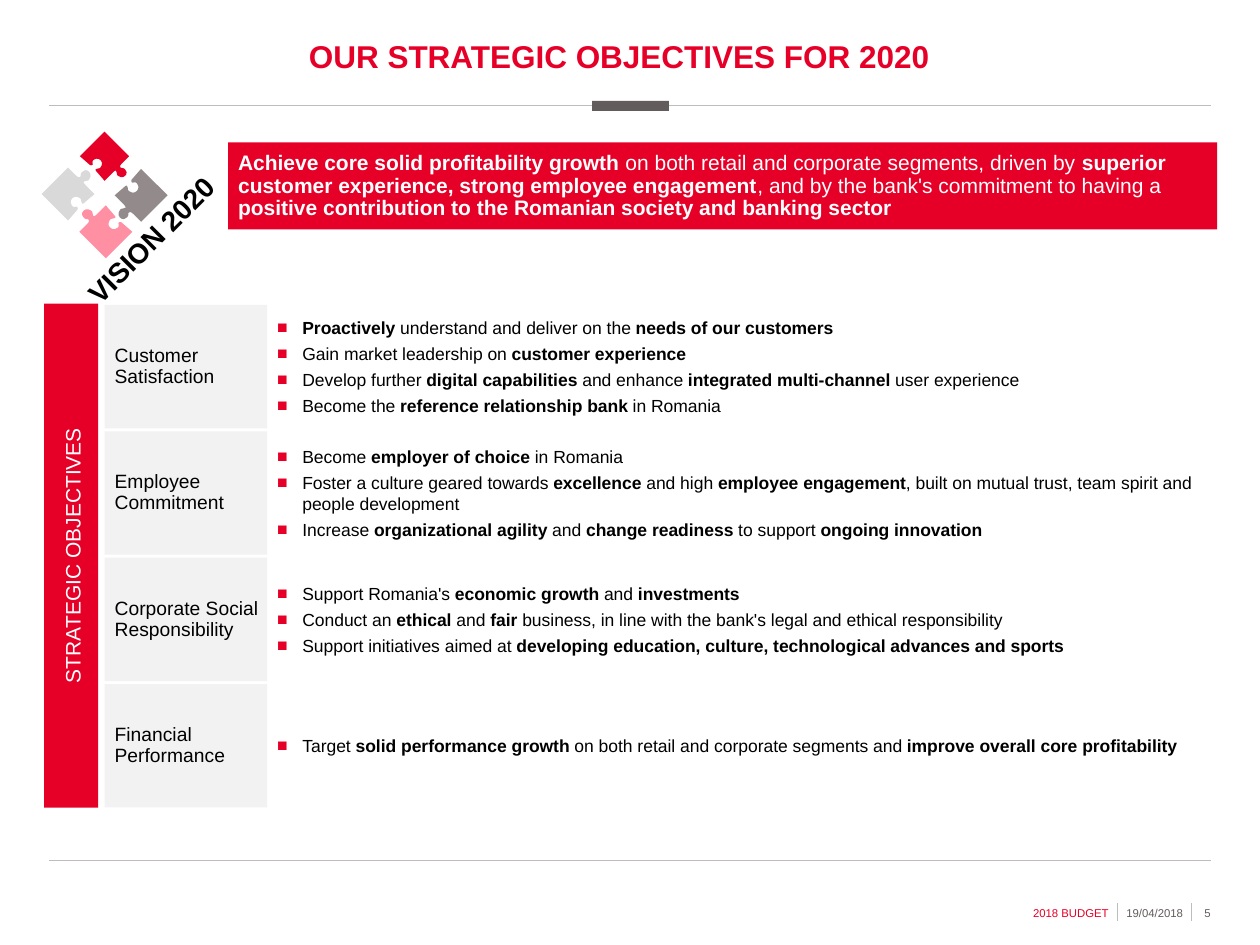
"""Build the slide on the strategic objectives for 2020."""
import math

import pptx
import pptx.dml.color
import pptx.enum.shapes
import pptx.enum.text
import pptx.util
from lxml import etree
from pptx.oxml.ns import qn

Inches = pptx.util.Inches
Pt = pptx.util.Pt
RGBColor = pptx.dml.color.RGBColor
ALIGN = pptx.enum.text.PP_ALIGN
ANCHOR = pptx.enum.text.MSO_ANCHOR

RED = RGBColor(0xE6, 0x00, 0x28)
PINK = RGBColor(0xFF, 0x8F, 0xA2)
DARK = RGBColor(0x63, 0x5C, 0x5C)
TAUPE = RGBColor(0x93, 0x8B, 0x8B)
SILVER = RGBColor(0xD9, 0xD9, 0xD9)
PALE = RGBColor(0xF2, 0xF2, 0xF2)
RULE = RGBColor(0xC1, 0xBC, 0xBC)
WHITE = RGBColor(0xFF, 0xFF, 0xFF)
BLACK = RGBColor(0x00, 0x00, 0x00)
FONT = "Arial"

TITLE = "OUR STRATEGIC OBJECTIVES FOR 2020"
VISION = ("|Achieve core solid profitability growth |on both retail and corporate segments, "
          "driven by |superior customer experience, strong employee engagement|, and by the "
          "bank's commitment to having a |positive contribution to the Romanian society and "
          "banking sector")
OBJECTIVES = [
    ("Customer Satisfaction", 4, [
        "|Proactively| understand and deliver on the |needs of our customers",
        "Gain market leadership on |customer experience",
        "Develop further |digital capabilities |and enhance |integrated multi-channel |user experience",
        "Become the |reference relationship bank |in Romania"]),
    ("Employee Commitment", 4, [
        "Become |employer of choice |in Romania",
        "Foster a culture geared towards |excellence| and high |employee engagement|, "
        "built on mutual trust, team spirit and people development",
        "Increase |organizational agility |and |change readiness |to support |ongoing innovation"]),
    ("Corporate Social Responsibility", 3, [
        "Support Romania's |economic growth |and |investments",
        "Conduct an |ethical| and |fair| business, in line with the bank's legal and ethical responsibility",
        "Support initiatives aimed at |developing education, culture, technological advances and sports"]),
    ("Financial Performance", 1, [
        "Target |solid performance growth |on both retail and corporate segments and "
        "|improve overall core profitability"]),
]
FOOTER = [("2018 BUDGET", 8.16, 0.68, 0.04, RED), ("19/04/2018", 8.9, 0.53, 0.04, DARK),
          ("5", 9.48, 0.13, 0, DARK)]
RULES = [(0.39, 0.84, 9.61, 0.84), (0.39, 6.83, 9.61, 6.83),
         (8.87, 7.17, 8.87, 7.31), (9.46, 7.17, 9.46, 7.31)]

PIECE_START = (-0.09, -0.03)
PIECE_OUTLINE = [
    (-0.11, -0.04, -0.10, -0.05, -0.11, -0.07), (-0.11, -0.08, -0.12, -0.08, -0.14, -0.06),
    (-0.21, 0), (-0.14, 0.07),
    (-0.12, 0.09, -0.12, 0.10, -0.13, 0.10), (-0.15, 0.11, -0.16, 0.10, -0.17, 0.12),
    (-0.20, 0.16, -0.15, 0.21, -0.12, 0.18), (-0.10, 0.17, -0.10, 0.15, -0.10, 0.14),
    (-0.09, 0.13, -0.08, 0.13, -0.06, 0.15),
    (0, 0.21), (0.21, 0), (0, -0.21), (-0.07, -0.13),
    (-0.08, -0.12, -0.08, -0.11, -0.07, -0.10), (-0.06, -0.10, -0.04, -0.11, -0.03, -0.09),
    (0, -0.05, -0.05, 0, -0.09, -0.03),
]
PIECES = [(1.12, 1.55, 0, 1, TAUPE), (0.83, 1.24, 270, 0.93, RED),
          (0.54, 1.54, 180, 1, SILVER), (0.84, 1.84, 90, 1, PINK)]


def set_frame(box, insets=(0, 0, 0, 0), anchor=ANCHOR.TOP, wrap=True):
    frame = box.text_frame
    frame.auto_size = pptx.enum.text.MSO_AUTO_SIZE.NONE
    frame.word_wrap = wrap
    frame.vertical_anchor = anchor
    frame.margin_left, frame.margin_top, frame.margin_right, frame.margin_bottom = map(Inches, insets)
    return frame


def write(para, text, size, color, bold=False, align=ALIGN.LEFT, spacing=None):
    para.alignment = align
    para.line_spacing = spacing
    for index, part in enumerate(text.split("|")):
        if part:
            span = para.add_run()
            span.text = part
            span.font.name = FONT
            span.font.size = Pt(size)
            span.font.bold = bold or index % 2 == 1
            span.font.color.rgb = color


def fill_plain(shape, color):
    shape.shadow.inherit = False
    shape.fill.solid()
    shape.fill.fore_color.rgb = color
    shape.line.fill.background()
    return shape


def add_block(page, left, top, width, height, color):
    kind = pptx.enum.shapes.MSO_SHAPE.RECTANGLE
    return fill_plain(page.shapes.add_shape(kind, *map(Inches, (left, top, width, height))), color)


def add_text_box(page, left, top, width, height):
    return page.shapes.add_textbox(*map(Inches, (left, top, width, height)))


def add_rule(page, ends):
    line = page.shapes.add_connector(pptx.enum.shapes.MSO_CONNECTOR.STRAIGHT, *map(Inches, ends))
    line.line.color.rgb = RULE
    line.line.width = Pt(0.5)
    etree.SubElement(line._element.spPr, qn("a:effectLst"))


def add_bullet(para):
    props = para._p.get_or_add_pPr()
    props.set("marL", str(Inches(0.2)))
    props.set("indent", str(Inches(-0.2)))
    color = etree.SubElement(props, qn("a:buClr"))
    etree.SubElement(color, qn("a:srgbClr"), val=str(RED))
    etree.SubElement(props, qn("a:buFont"), typeface=FONT)
    etree.SubElement(props, qn("a:buChar"), char="■")


def piece_points(steps=6):
    points = [PIECE_START]
    for segment in PIECE_OUTLINE:
        if len(segment) == 2:
            points.append(segment)
            continue
        controls = [points[-1], segment[:2], segment[2:4], segment[4:]]
        for step in range(1, steps + 1):
            t = step / steps
            weights = [math.comb(3, k) * t ** k * (1 - t) ** (3 - k) for k in range(4)]
            points.append(tuple(sum(w * c[axis] for w, c in zip(weights, controls)) for axis in (0, 1)))
    return points


def add_piece(page, center_x, center_y, angle, scale, color):
    cosine = scale * math.cos(math.radians(angle))
    sine = scale * math.sin(math.radians(angle))
    placed = [(Inches(center_x + x * cosine - y * sine), Inches(center_y + x * sine + y * cosine))
              for x, y in piece_points()]
    builder = page.shapes.build_freeform(*placed[0], scale=1.0)
    builder.add_line_segments(placed[1:], close=True)
    fill_plain(builder.convert_to_shape(), color)


def add_objective(page, index, label, lines, bullets):
    top, height = 2.42 + index * 1.003, 0.98
    block = add_block(page, 0.83, top, 1.29, height, PALE)
    frame = set_frame(block, (0.08, 0.08, 0.04, 0.08), ANCHOR.MIDDLE)
    write(frame.paragraphs[0], label, 11, BLACK, spacing=0.9)
    text_height = (lines * 12 + (len(bullets) - 1) * 3) / 72
    box = add_text_box(page, 2.2, top + (height - text_height) / 2, 7.47, text_height)
    frame = set_frame(box)
    for number, bullet in enumerate(bullets):
        para = frame.add_paragraph() if number else frame.paragraphs[0]
        add_bullet(para)
        if number:
            para.space_before = Pt(3)
        write(para, bullet, 10, BLACK, spacing=Pt(12))


def main():
    deck = pptx.Presentation()
    deck.slide_width, deck.slide_height = Inches(10), Inches(7.5)
    page = deck.slides.add_slide(deck.slide_layouts[5])

    title = page.shapes.title
    title.left, title.top, title.width, title.height = map(Inches, (0.35, 0.29, 9.21, 0.3))
    frame = set_frame(title, (0, 0, 0.08, 0), ANCHOR.MIDDLE)
    write(frame.paragraphs[0], TITLE, 18, RED, bold=True, align=ALIGN.CENTER)

    for ends in RULES:
        add_rule(page, ends)
    add_block(page, 4.7, 0.8, 0.61, 0.08, DARK)
    for text, left, width, side, color in FOOTER:
        box = add_text_box(page, left, 7.15, width, 0.18)
        frame = set_frame(box, (side, 0.04, side, 0.04), wrap=False)
        write(frame.paragraphs[0], text, 6.5, color, align=ALIGN.RIGHT)

    banner = add_block(page, 1.81, 1.13, 7.85, 0.69, RED)
    frame = set_frame(banner, (0.08, 0.08, 0.08, 0.08))
    write(frame.paragraphs[0], VISION, 12, WHITE, spacing=0.9)

    spine = add_block(page, 0.35, 2.41, 0.43, 4, RED)
    frame = set_frame(spine, (0.04, 0, 0, 0), ANCHOR.MIDDLE)
    frame._txBody.bodyPr.set("vert", "vert270")
    write(frame.paragraphs[0], "STRATEGIC OBJECTIVES", 12, WHITE, align=ALIGN.CENTER, spacing=0.9)

    for index, objective in enumerate(OBJECTIVES):
        add_objective(page, index, *objective)
    for piece in PIECES:
        add_piece(page, *piece)

    vision = add_text_box(page, 0.5, 1.72, 1.4, 0.35)
    vision.rotation = 314.9
    frame = set_frame(vision, (0.04, 0.04, 0.04, 0.04), ANCHOR.MIDDLE, wrap=False)
    write(frame.paragraphs[0], "VISION 2020", 16, BLACK, bold=True)

    deck.save("out.pptx")


if __name__ == "__main__":
    main()
